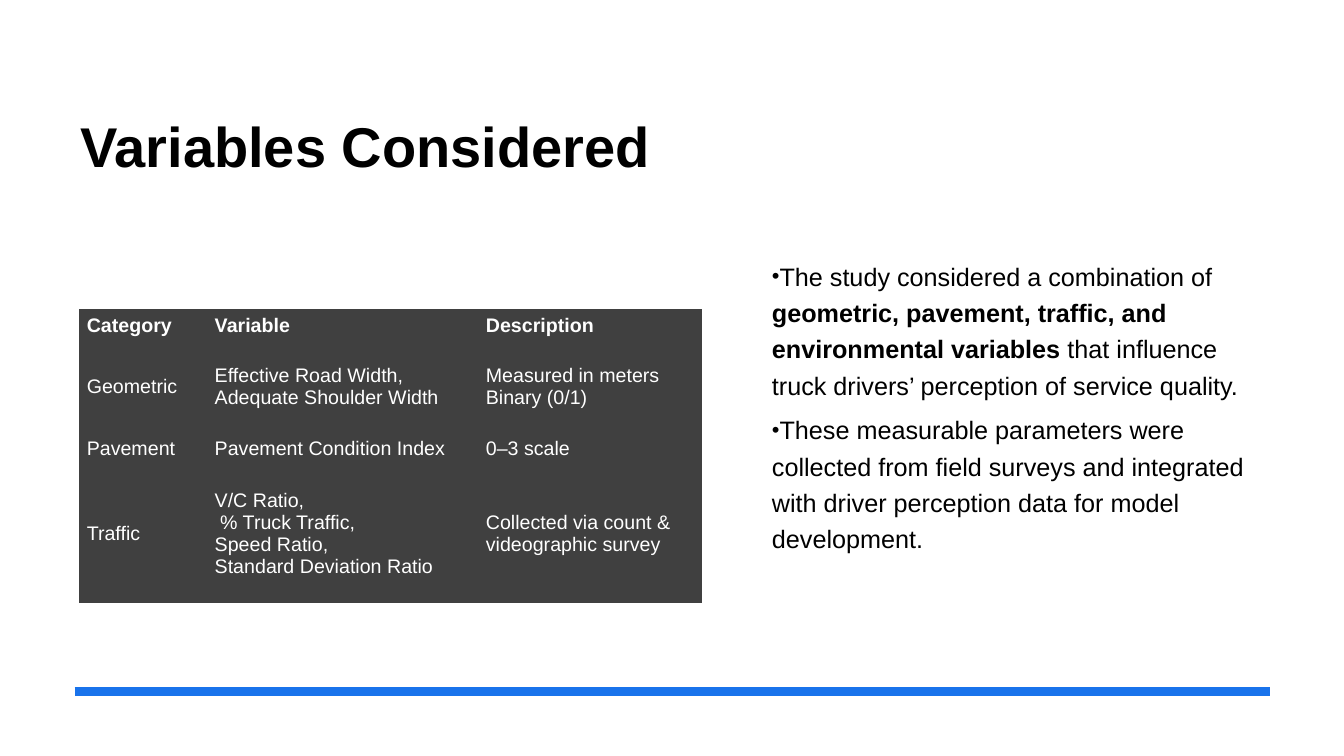
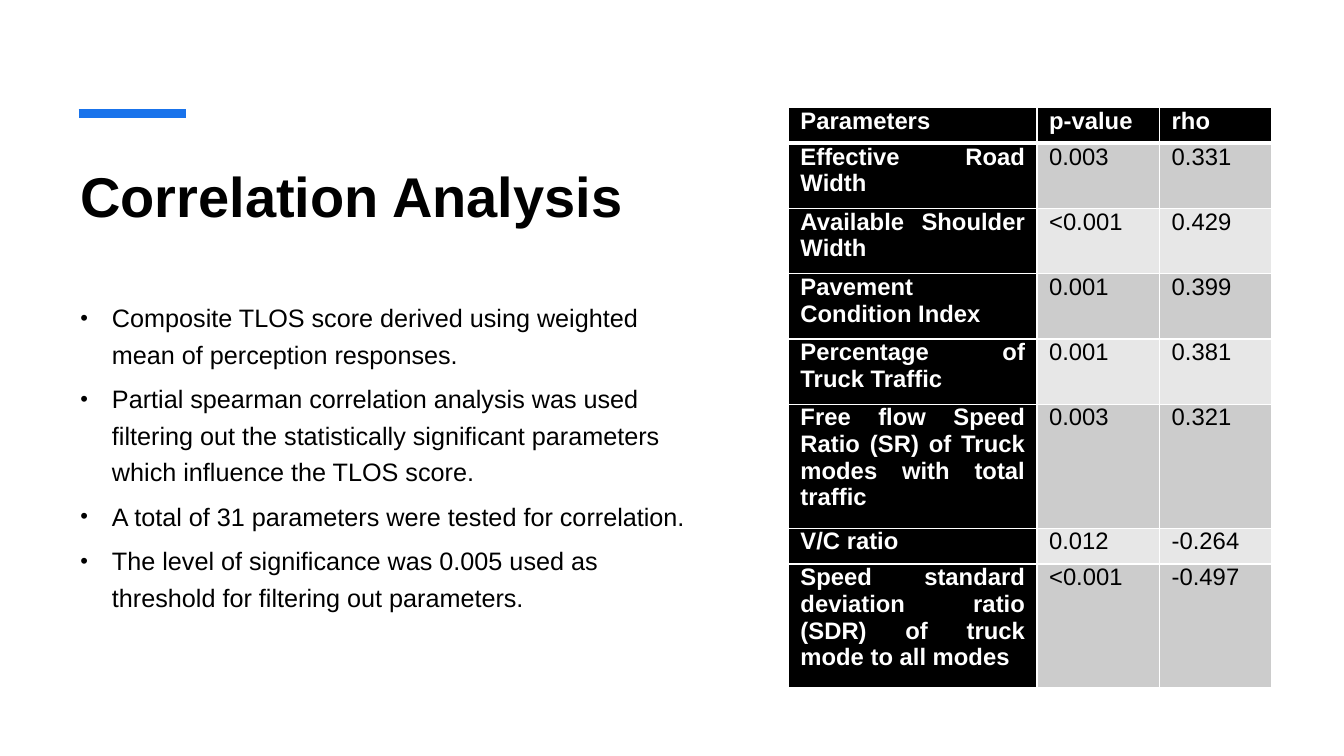
from dataclasses import dataclass

from lxml.etree import SubElement
from pptx import Presentation
from pptx.dml.color import RGBColor
from pptx.enum.shapes import MSO_CONNECTOR
from pptx.enum.text import MSO_ANCHOR, PP_ALIGN
from pptx.oxml.ns import qn
from pptx.util import Pt


@dataclass(frozen=True)
class Theme:
    font: str = "Arial"
    ink: str = "000000"
    paper: str = "FFFFFF"
    accent: str = "1973EB"
    panel: str = "404040"
    bands: tuple = ("CCCCCC", "E7E7E7")
    title_size: int = 40
    body_size: int = 18
    variable_size: int = 14
    result_size: int = 17
    rule_width: int = 6


THEME = Theme()


@dataclass(frozen=True)
class Box:
    left: float
    top: float
    width: float
    height: float = 0

    def points(self):
        return Pt(self.left), Pt(self.top), Pt(self.width), Pt(self.height)


VARIABLES = [
    ("Category", "Variable", "Description"),
    ("Geometric", "Effective Road Width,\nAdequate Shoulder Width",
     "Measured in meters\nBinary (0/1)"),
    ("Pavement", "Pavement Condition Index", "0–3 scale"),
    ("Traffic",
     "V/C Ratio,\n % Truck Traffic,\nSpeed Ratio,\nStandard Deviation Ratio",
     "Collected via count & videographic survey"),
]

CORRELATIONS = [
    ("Parameters", "p-value", "rho"),
    ("Effective Road Width", "0.003", "0.331"),
    ("Available Shoulder Width", "<0.001", "0.429"),
    ("Pavement Condition Index", "0.001", "0.399"),
    ("Percentage of Truck Traffic", "0.001", "0.381"),
    ("Free flow Speed Ratio (SR) of Truck modes with total traffic",
     "0.003", "0.321"),
    ("V/C ratio", "0.012", "-0.264"),
    ("Speed standard deviation ratio (SDR) of truck mode to all modes",
     "<0.001", "-0.497"),
]

STUDY_POINTS = [
    [("The study considered a combination of ", False),
     ("geometric, pavement, traffic, and environmental variables", True),
     (" that influence truck drivers’ perception of service quality.", False)],
    "These measurable parameters were collected from field surveys and "
    "integrated with driver perception data for model development.",
]

ANALYSIS_POINTS = [
    "Composite TLOS score derived using weighted mean of perception responses.",
    "Partial spearman correlation analysis was used filtering out the "
    "statistically significant parameters which influence the TLOS score.",
    "A total of 31 parameters were tested for correlation.",
    "The level of significance was 0.005 used as threshold for filtering out "
    "parameters.",
]


# Text
def add_bullet(paragraph, hanging):
    properties = paragraph._p.get_or_add_pPr()
    properties.set("marL", str(Pt(hanging)))
    properties.set("indent", str(-Pt(hanging)))
    SubElement(properties, qn("a:buSzPct"), val="87000")
    SubElement(properties, qn("a:buFont"), typeface=THEME.font)
    SubElement(properties, qn("a:buChar"), char="•")


def write_text(frame, paragraphs, *, size, color=THEME.ink, bold=False,
               align=PP_ALIGN.LEFT, spacing=1.0, before=0, after=0,
               hanging=None):
    """Each paragraph is a string or a list of (text, bold) runs."""
    for index, content in enumerate(paragraphs):
        paragraph = frame.add_paragraph() if index else frame.paragraphs[0]
        paragraph.alignment = align
        paragraph.line_spacing = spacing
        paragraph.space_before, paragraph.space_after = Pt(before), Pt(after)
        if hanging is not None:
            add_bullet(paragraph, hanging)
        runs = [(content, bold)] if isinstance(content, str) else content
        for text, run_bold in runs:
            run = paragraph.add_run()
            run.text = text
            font = run.font
            font.name, font.size, font.bold = THEME.font, Pt(size), run_bold
            font.color.rgb = RGBColor.from_string(color)


def add_text(slide, box, paragraphs, *, inset_top=3.6, **text_format):
    frame = slide.shapes.add_textbox(*box.points()).text_frame
    frame.word_wrap = True
    frame.margin_top = Pt(inset_top)
    write_text(frame, paragraphs, **text_format)


def add_title(slide, box, text):
    add_text(slide, box, [text], inset_top=7.5, size=THEME.title_size,
             bold=True)


def add_bullets(slide, box, points, hanging):
    add_text(slide, box, points, inset_top=4.5, size=THEME.body_size,
             spacing=1.2, after=6, hanging=hanging)


# Accent rule
def add_rule(slide, box):
    left, top, width, _ = box.points()
    rule = slide.shapes.add_connector(MSO_CONNECTOR.STRAIGHT, left, top,
                                      left + width, top)
    rule.line.color.rgb = RGBColor.from_string(THEME.accent)
    rule.line.width = Pt(THEME.rule_width)
    SubElement(rule._element.spPr, qn("a:effectLst"))


# Tables
def set_borders(cell, widths):
    """Widths run left, right, top, bottom; zero means no line."""
    properties = cell._tc.get_or_add_tcPr()
    for side, width in zip("LRTB", widths):
        line = SubElement(properties, qn(f"a:ln{side}"), w=str(Pt(width)))
        if width:
            fill = SubElement(line, qn("a:solidFill"))
            SubElement(fill, qn("a:srgbClr"), val=THEME.paper)
        else:
            SubElement(line, qn("a:noFill"))


def add_grid(slide, box, rows, widths, heights, style_cell, *, insets, anchor,
             **text_format):
    """style_cell(row, column) gives fill, text colour, bold and borders."""
    table = slide.shapes.add_table(len(rows), len(widths),
                                   *box.points()).table
    for column, width in zip(table.columns, widths):
        column.width = Pt(width)
    for row, height in zip(table.rows, heights):
        row.height = Pt(height)
    for row_index, values in enumerate(rows):
        for column_index, value in enumerate(values):
            cell = table.cell(row_index, column_index)
            fill, color, bold, borders = style_cell(row_index, column_index)
            set_borders(cell, borders)
            cell.fill.solid()
            cell.fill.fore_color.rgb = RGBColor.from_string(fill)
            (cell.margin_left, cell.margin_top, cell.margin_right,
             cell.margin_bottom) = map(Pt, insets)
            cell.vertical_anchor = anchor
            write_text(cell.text_frame, value.split("\n"), color=color,
                       bold=bold, **text_format)


def variable_style(row, column):
    borders = (0 if column else 1, 0, 0, 0)
    return THEME.panel, THEME.paper, row == 0, borders


def correlation_style(row, column):
    borders = (1, 1, 3 if row == 1 else 1, 3 if row == 0 else 1)
    if row == 0 or column == 0:
        return THEME.ink, THEME.paper, True, borders
    return THEME.bands[(row - 1) % 2], THEME.ink, False, borders


def add_variable_table(slide, box):
    add_grid(slide, box, VARIABLES, (91.4, 193.7, 159.9),
             (35.3, 52.6, 35.3, 87.1), variable_style,
             insets=(5.8, 1.4, 8.6, 13), anchor=MSO_ANCHOR.MIDDLE,
             size=THEME.variable_size)


def add_correlation_table(slide, box):
    line, double, quadruple = 25.6, 46.6, 88.6
    heights = (line, *[double] * 4, quadruple, line, quadruple)
    add_grid(slide, box, CORRELATIONS, (177.6, 87.6, 79.6), heights,
             correlation_style, insets=(8.6, 0, 8.6, 0),
             anchor=MSO_ANCHOR.TOP, align=PP_ALIGN.JUSTIFY, before=0.5,
             size=THEME.result_size)


# Slides
def add_blank_slide(presentation):
    slide = presentation.slides.add_slide(presentation.slide_layouts[6])
    slide.background.fill.solid()
    slide.background.fill.fore_color.rgb = RGBColor.from_string(THEME.paper)
    return slide


def add_variables_slide(presentation):
    slide = add_blank_slide(presentation)
    add_title(slide, Box(50.4, 72, 854, 92), "Variables Considered")
    add_bullets(slide, Box(544.3, 177.8, 359.3, 296), STUDY_POINTS, hanging=0)
    add_rule(slide, Box(53.3, 493.9, 853.9))
    add_variable_table(slide, Box(56.2, 220.5, 445, 210.3))


def add_correlation_slide(presentation):
    slide = add_blank_slide(presentation)
    add_title(slide, Box(50.4, 108, 451.4, 86.4), "Correlation Analysis")
    add_rule(slide, Box(56.2, 81.2, 77))
    add_bullets(slide, Box(50.4, 207.4, 452.2, 288.7), ANALYSIS_POINTS,
                hanging=22.5)
    add_correlation_table(slide, Box(563.2, 76.8, 344.8, 414.8))


def main():
    presentation = Presentation()
    presentation.slide_width, presentation.slide_height = Pt(960), Pt(540)
    add_variables_slide(presentation)
    add_correlation_slide(presentation)
    presentation.save("out.pptx")


if __name__ == "__main__":
    main()
